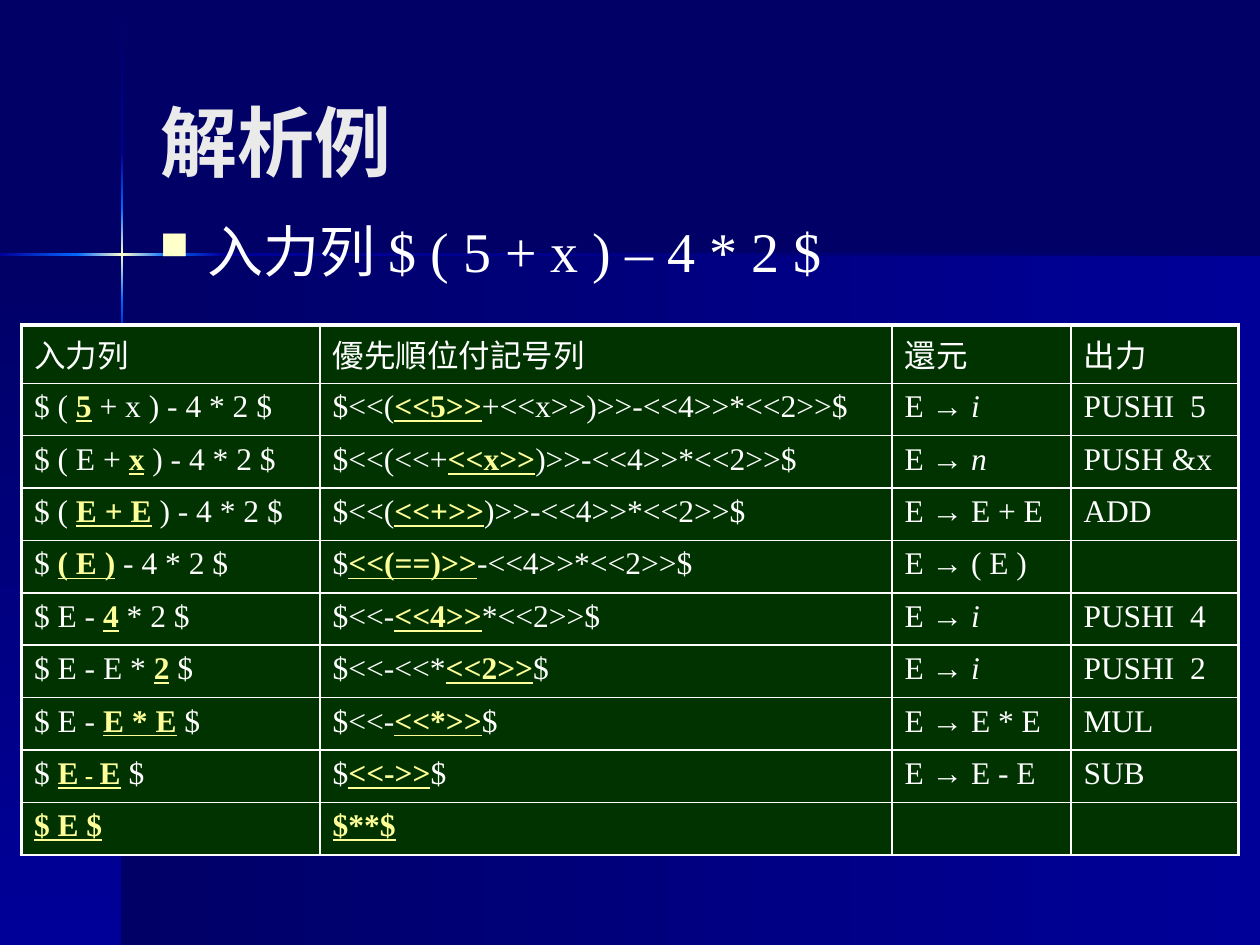
import itertools
from dataclasses import dataclass

import pptx
import pptx.dml.color
import pptx.enum.shapes
import pptx.enum.text
import pptx.oxml
import pptx.oxml.ns
import pptx.util
from pptx.util import Inches


@dataclass(frozen=True)
class Theme:
    font: str = "Times New Roman"
    night: str = "000066"
    navy: str = "000099"
    blue: str = "0066FF"
    glow: str = "FFFFCC"
    heading: str = "EAEAEA"
    text: str = "FFFFFF"
    handle: str = "FFFF99"
    cell: str = "003300"
    title_size: int = 44
    body_size: int = 32
    table_size: int = 18
    outer_line: float = 2.25
    inner_line: float = 1


THEME = Theme()
COLUMN_WIDTHS = [2.37, 4.54, 1.42, 1.33]

# Text between bars is the handle being reduced; in the rule column it is a terminal.
PARSE_STEPS = [
    ("入力列", "優先順位付記号列", "還元", "出力"),
    ("$ ( |5| + x ) - 4 * 2 $", "$<<(|<<5>>|+<<x>>)>>-<<4>>*<<2>>$", "E → |i|", "PUSHI  5"),
    ("$ ( E + |x| ) - 4 * 2 $", "$<<(<<+|<<x>>|)>>-<<4>>*<<2>>$", "E → |n|", "PUSH &x"),
    ("$ ( |E + E| ) - 4 * 2 $", "$<<(|<<+>>|)>>-<<4>>*<<2>>$", "E → E + E", "ADD"),
    ("$ |( E )| - 4 * 2 $", "$|<<(==)>>|-<<4>>*<<2>>$", "E → ( E )", ""),
    ("$ E - |4| * 2 $", "$<<-|<<4>>|*<<2>>$", "E → |i|", "PUSHI  4"),
    ("$ E - E * |2| $", "$<<-<<*|<<2>>|$", "E → |i|", "PUSHI  2"),
    ("$ E - |E * E| $", "$<<-|<<*>>|$", "E → E * E", "MUL"),
    ("$ |E - E| $", "$|<<->>|$", "E → E - E", "SUB"),
    ("|$ E $|", "|$**$|", "", ""),
]
RULE_COLUMN = 2
SMALL_CAPS_HANDLE = "E - E"


def rgb(value):
    return pptx.dml.color.RGBColor.from_string(value)


def add_xml(parent, markup):
    tag, rest = markup.split(" ", 1)
    namespace = pptx.oxml.ns.nsdecls("a")
    parent.append(pptx.oxml.parse_xml(f"<a:{tag} {namespace} {rest}"))


def add_run(paragraph, text, size, color=THEME.text, **formats):
    run = paragraph.add_run()
    run.text = text
    run.font.color.rgb = rgb(color)
    formats = {"name": THEME.font, "size": pptx.util.Pt(size), "bold": False, **formats}
    for name, value in formats.items():
        setattr(run.font, name, value)
    return run


def add_gradient_box(group, box, colors, downward):
    shape = group.shapes.add_shape(
        pptx.enum.shapes.MSO_SHAPE.RECTANGLE, *map(Inches, box))
    shape.shadow.inherit = False
    shape.line.fill.background()
    shape.fill.gradient()
    shape.fill.gradient_angle = 270 if downward else 0
    stops = shape._element.spPr.find(".//" + pptx.oxml.ns.qn("a:gsLst"))
    for stop in list(stops):
        stops.remove(stop)
    for index, color in enumerate(colors):
        position = 100000 * index // (len(colors) - 1)
        add_xml(stops, f'gs pos="{position}"><a:srgbClr val="{color}"/></a:gs>')


def add_backdrop(slide, width, height):
    """Two shaded panels and a glowing cross, behind everything else."""
    t = THEME
    cross_x, cross_y, thickness = 0.97, 2.02, 0.02
    group = slide.shapes.add_group_shape()
    slide.shapes._spTree.insert(2, group._element)
    panel = (t.night, t.navy)
    add_gradient_box(group, (cross_x, cross_y, width - cross_x, height - cross_y), panel, False)
    add_gradient_box(group, (0, cross_y, cross_x, height - cross_y), panel, True)

    shades = [(t.night, t.navy), (t.navy, t.blue), (t.blue, t.glow, t.blue),
              (t.blue, t.navy), (t.navy, t.night)]
    vertical = itertools.pairwise([0.01, 1.21, 1.65, 2.38, 2.82, height])
    for (top, bottom), colors in zip(vertical, shades):
        box = (cross_x - thickness / 2, top, thickness, bottom - top)
        add_gradient_box(group, box, colors, True)
    horizontal = itertools.pairwise([0, 0.61, 1.33, 1.77, width])
    for (left, right), colors in zip(horizontal, shades[1:]):
        box = (left, cross_y - thickness / 2, right - left, thickness)
        add_gradient_box(group, box, colors, False)


def place_title(slide, box, text):
    title = slide.shapes.title
    for name, value in zip(("left", "top", "width", "height"), box):
        setattr(title, name, Inches(value))
    title.text_frame.vertical_anchor = pptx.enum.text.MSO_ANCHOR.MIDDLE
    paragraph = title.text_frame.paragraphs[0]
    paragraph.alignment = pptx.enum.text.PP_ALIGN.LEFT
    add_run(paragraph, text, THEME.title_size, THEME.heading, bold=True)


def add_bullet(slide, box, text):
    frame = slide.shapes.add_textbox(*map(Inches, box)).text_frame
    frame.word_wrap = True
    paragraph = frame.paragraphs[0]
    add_run(paragraph, text, THEME.body_size)
    properties = paragraph._p.get_or_add_pPr()
    indent = Inches(0.38)
    properties.set("marL", str(indent))
    properties.set("indent", str(-indent))
    add_xml(properties, f'buClr ><a:srgbClr val="{THEME.glow}"/></a:buClr>')
    add_xml(properties, 'buSzPct val="70000"/>')
    add_xml(properties, 'buChar char="■"/>')


def style_cell(cell, outer_sides):
    """Draw the four borders, thicker on the sides in outer_sides, then fill."""
    properties = cell._tc.get_or_add_tcPr()
    for side in "LRTB":
        points = THEME.outer_line if side in outer_sides else THEME.inner_line
        add_xml(properties, f'ln{side} w="{pptx.util.Pt(points)}"><a:solidFill>'
                            f'<a:srgbClr val="{THEME.text}"/></a:solidFill></a:ln{side}>')
    cell.fill.solid()
    cell.fill.fore_color.rgb = rgb(THEME.cell)


def write_cell(cell, marked_text, marked_format):
    paragraph = cell.text_frame.paragraphs[0]
    paragraph.font.size = pptx.util.Pt(THEME.table_size)
    for index, part in enumerate(marked_text.split("|")):
        if not part:
            continue
        marked = index % 2 == 1
        run = add_run(paragraph, part, THEME.table_size, **(marked_format if marked else {}))
        if marked and part == SMALL_CAPS_HANDLE:
            run.font._element.set("cap", "small")


def add_parse_table(slide, box, steps):
    row_count = len(steps)
    table = slide.shapes.add_table(row_count, len(COLUMN_WIDTHS), *map(Inches, box)).table
    table.first_row = table.horz_banding = False
    for column, width in zip(table.columns, COLUMN_WIDTHS):
        column.width = Inches(width)
    handle = {"color": THEME.handle, "bold": True, "underline": True}
    terminal = {"italic": True}
    last_column = len(COLUMN_WIDTHS) - 1
    for r, step in enumerate(steps):
        table.rows[r].height = Inches(box[3] / row_count)
        for c, text in enumerate(step):
            edges = {"L": c == 0, "R": c == last_column, "T": r == 0}
            cell = table.cell(r, c)
            style_cell(cell, [side for side, outer in edges.items() if outer])
            write_cell(cell, text, terminal if c == RULE_COLUMN else handle)


def main():
    width, height = 10, 7.5
    deck = pptx.Presentation()
    deck.slide_width, deck.slide_height = Inches(width), Inches(height)
    slide = deck.slides.add_slide(deck.slide_layouts.get_by_name("Title Only"))
    slide.background.fill.solid()
    slide.background.fill.fore_color.rgb = rgb(THEME.night)
    add_backdrop(slide, width, height)
    add_parse_table(slide, (0.17, 2.58, sum(COLUMN_WIDTHS), 4.16), PARSE_STEPS)
    place_title(slide, (1.17, 0.33, 8.25, 1.57), "解析例")
    add_bullet(slide, (1.17, 1.67, 8.17, 0.75), "入力列 $ ( 5 + x ) – 4 * 2 $")
    deck.save("out.pptx")


if __name__ == "__main__":
    main()
